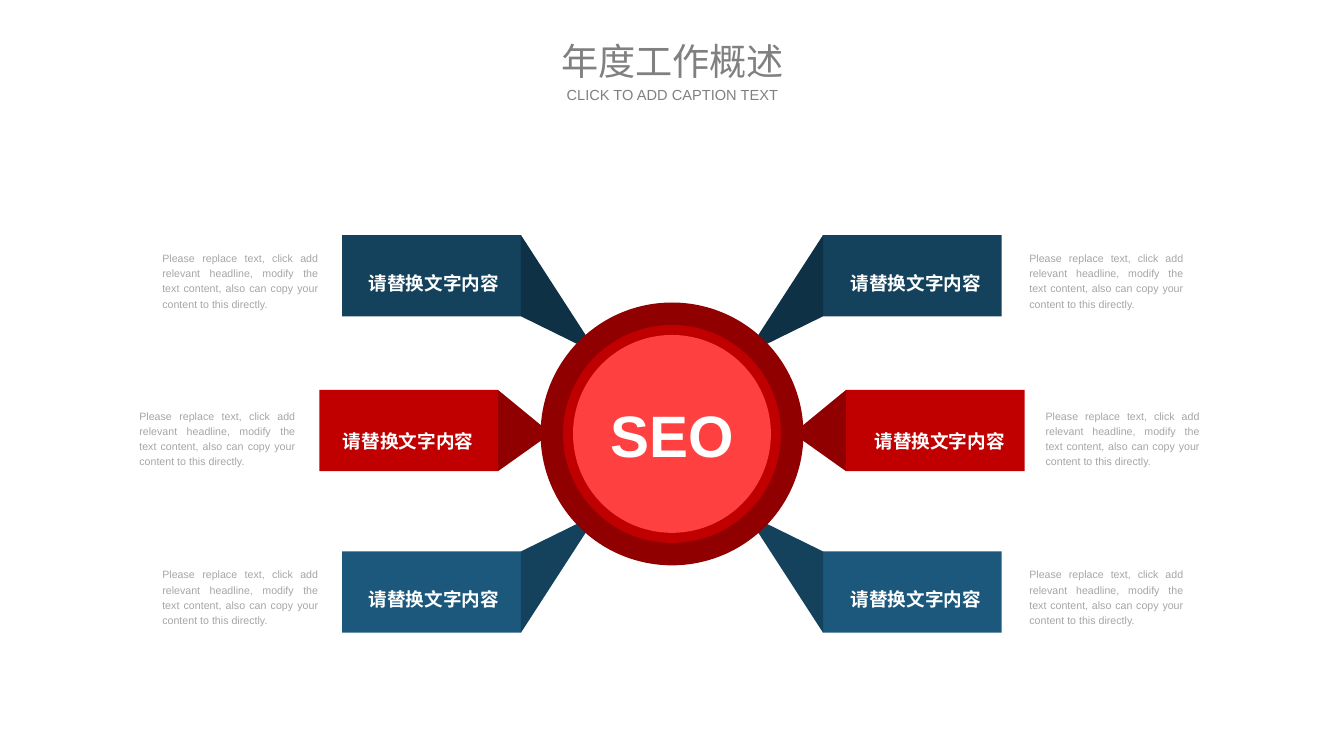
from pptx import Presentation
from pptx.dml.color import RGBColor
from pptx.enum.shapes import MSO_SHAPE
from pptx.enum.text import MSO_ANCHOR, PP_ALIGN
from pptx.util import Inches, Pt

RECT, OVAL = MSO_SHAPE.RECTANGLE, MSO_SHAPE.OVAL
MIDDLE, TOP = MSO_ANCHOR.MIDDLE, MSO_ANCHOR.TOP
CENTER, JUSTIFY = PP_ALIGN.CENTER, PP_ALIGN.JUSTIFY

WIDE, HIGH = 14.06, 7.91
MID_X, MID_Y = WIDE / 2, 4.54
BAR_W, BAR_H = 1.87, 0.85
LABEL = "请替换文字内容"
NOTE = ("Please replace text, click add relevant headline, modify the text "
        "content, also can copy your content to this directly.")

# Fold corners: distance from the bar's inner edge towards the hub, then down
SLANT = [(0, 0), (0.68, 1.05), (0.59, 1.14), (0, BAR_H)]
RISE = [(x, BAR_H - y) for x, y in SLANT]
FLAT = [(0, 0), (0.45, 0.37), (0.45, 0.53), (0, BAR_H)]

# Gap from hub centre, top, bar colour, fold colour, fold, text drop,
# then left and right positions of labels and notes
ROWS = [
    (1.58, 2.46, "14425D", "0F3146", SLANT, 0, (3.75, 8.79), (1.6, 10.67)),
    (1.58, 5.77, "1B587C", "14425D", RISE, 0, (3.75, 8.79), (1.6, 10.67)),
    (1.82, 4.08, "C00000", "900000", FLAT, 0.03, (3.48, 9.04), (1.36, 10.84)),
]
DISCS = [(2.75, "900000"), (2.28, "C00000"), (2.07, "FF4040")]


def rgb(color):
    return RGBColor.from_string(color)


def paint(shape, color):
    shape.shadow.inherit = False
    shape.fill.solid()
    shape.fill.fore_color.rgb = rgb(color)
    shape.line.fill.background()


def add_block(slide, kind, box, color):
    shape = slide.shapes.add_shape(kind, *map(Inches, box))
    paint(shape, color)
    return shape


def write(shape, text, size, color, align=CENTER, bold=False, spacing=None):
    frame = shape.text_frame
    frame.text = text
    para = frame.paragraphs[0]
    para.alignment = align
    if spacing:
        para.line_spacing = spacing
    font = para.runs[0].font
    font.name, font.size, font.bold = "Arial", Pt(size), bold
    font.color.rgb = rgb(color)


def add_text(slide, box, text, size, color, wrap=True, flush=False, **style):
    """Add a text box; flush drops its margins and centres it vertically."""
    shape = slide.shapes.add_textbox(*map(Inches, box))
    frame = shape.text_frame
    frame.word_wrap = wrap
    frame.vertical_anchor = MIDDLE if flush else TOP
    if flush:
        frame.margin_left = frame.margin_right = 0
        frame.margin_top = frame.margin_bottom = 0
    write(shape, text, size, color, **style)


def add_title(slide, left, top, width):
    add_text(slide, (left, top, width, 0.49), "年度工作概述", 28, "808080",
             flush=True)
    add_text(slide, (left, top + 0.51, width, 0.19),
             "CLICK TO ADD CAPTION TEXT", 11, "808080", flush=True)


def add_wing(slide, side, row):
    """Add bar and fold; side is -1 for left of the hub, 1 for right."""
    gap, top, color, shade, fold = row[:5]
    edge = MID_X + side * gap
    left = edge if side > 0 else edge - BAR_W
    add_block(slide, RECT, (left, top, BAR_W, BAR_H), color)
    points = [(Inches(edge - side * x), Inches(top + y)) for x, y in fold]
    pen = slide.shapes.build_freeform(*points[0])
    pen.add_line_segments(points[1:], close=True)
    paint(pen.convert_to_shape(), shade)


def add_words(slide, side, row):
    top, drop, labels, notes = row[1], *row[5:]
    pick = 0 if side < 0 else 1
    add_text(slide, (labels[pick], top + 0.29 + drop, 1.58, 0.36), LABEL, 14,
             "FFFFFF", wrap=False, bold=True, spacing=1.2)
    add_text(slide, (notes[pick], top + 0.1 + drop, 1.83 - 0.02 * pick, 0.73),
             NOTE, 8, "A6A6A6", align=JUSTIFY, spacing=1.2)


def add_hub(slide, x, y):
    for size, color in DISCS:
        disc = add_block(slide, OVAL,
                         (x - size / 2, y - size / 2, size, size), color)
    disc.text_frame.word_wrap = False
    disc.text_frame.vertical_anchor = MIDDLE
    write(disc, "SEO", 44, "FFFFFF", bold=True)


def main():
    deck = Presentation()
    deck.slide_width, deck.slide_height = Inches(WIDE), Inches(HIGH)
    slide = deck.slides.add_slide(deck.slide_layouts[6])
    wings = [(side, row) for row in ROWS for side in (1, -1)]
    for side, row in wings:
        add_wing(slide, side, row)
    add_hub(slide, MID_X, MID_Y)
    for side, row in wings:
        add_words(slide, side, row)
    add_title(slide, 5.77, 0.39, 2.53)
    deck.save("out.pptx")


if __name__ == "__main__":
    main()
